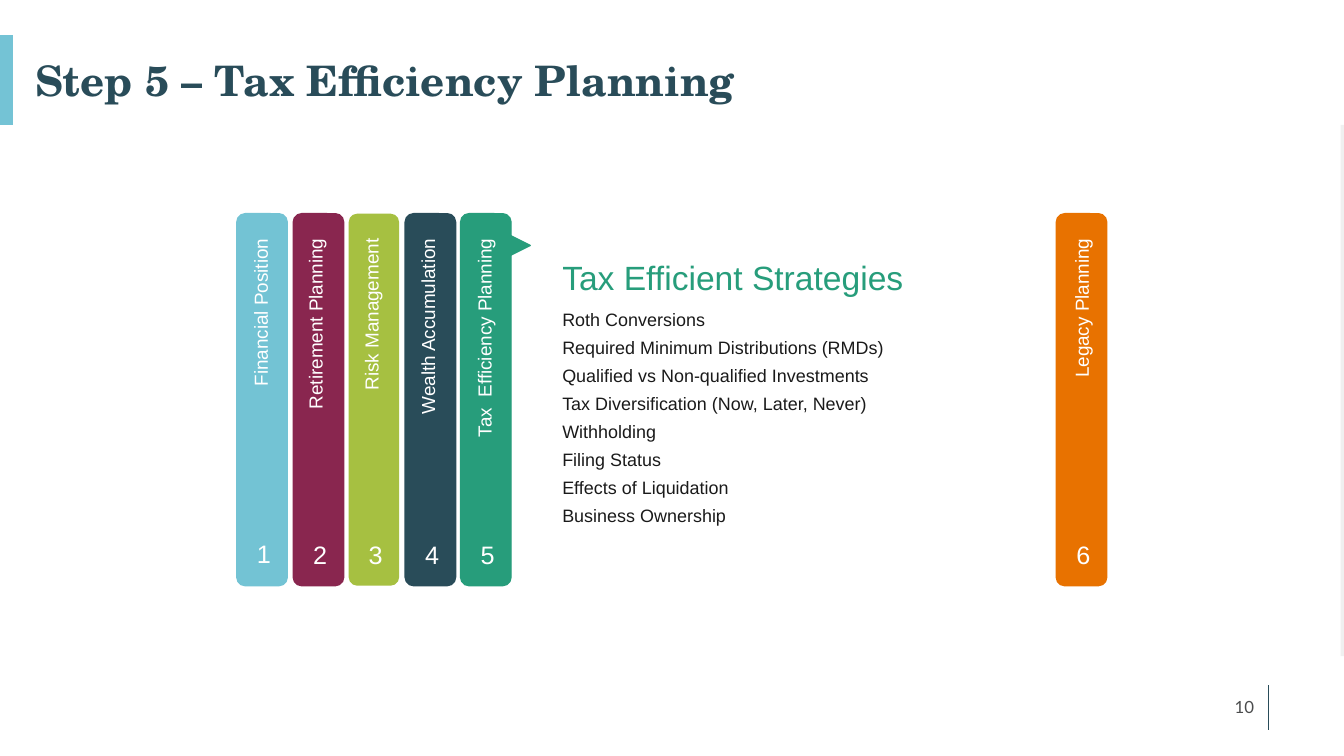
from lxml import etree
from pptx import Presentation
from pptx.dml.color import RGBColor
from pptx.enum.shapes import MSO_CONNECTOR, MSO_SHAPE
from pptx.enum.text import MSO_ANCHOR, PP_ALIGN
from pptx.oxml.ns import qn
from pptx.util import Pt

RECT, ROUND = MSO_SHAPE.RECTANGLE, MSO_SHAPE.ROUNDED_RECTANGLE
ARROW = MSO_SHAPE.RIGHT_ARROW
STRAIGHT = MSO_CONNECTOR.STRAIGHT
LEFT, CENTER, RIGHT = PP_ALIGN.LEFT, PP_ALIGN.CENTER, PP_ALIGN.RIGHT
TOP, MIDDLE, BOTTOM = MSO_ANCHOR.TOP, MSO_ANCHOR.MIDDLE, MSO_ANCHOR.BOTTOM

COLORS = {
    "white": "FFFFFF", "edge": "F0F0F0", "accent": "74C3D5",
    "sky": "73C3D4", "plum": "89264F", "lime": "A6C041",
    "navy": "294C59", "green": "279D7B", "orange": "E87200",
    "ink": "1A1A1A", "grey": "4B4C4D",
}

BAR_TOP, BAR_WIDTH, BAR_HEIGHT = 152.64, 36, 265.68
LABEL_TOP, LABEL_HEIGHT = 163.4, 23.76

# Label, colour, bar left, label length, label centre, number top
STEPS = [
    ("Financial Position", "sky", 169.2, 147.6, 186.12, 380.88),
    ("Retirement Planning", "plum", 209.52, 152.64, 225.36, 381.6),
    ("Risk Management", "lime", 249.12, 138.96, 265.32, 381.6),
    ("Wealth Accumulation", "navy", 289.44, 164.88, 305.64, 381.6),
    ("Tax  Efficiency Planning", "green", 329.04, 164.88, 345.96, 381.6),
    ("Legacy Planning", "orange", 754.56, 128.16, 772.56, 381.6),
]

STRATEGIES = [
    "Roth Conversions",
    "Required Minimum Distributions (RMDs)",
    "Qualified vs Non-qualified Investments",
    "Tax Diversification (Now, Later, Never)",
    "Withholding",
    "Filing Status",
    "Effects of Liquidation",
    "Business Ownership",
]


def write(frame, text, size=18, color="white", font="Arial", bold=False,
          align=LEFT, anchor=TOP, wrap=True, spacing=None, before=0):
    frame.word_wrap = wrap
    frame.vertical_anchor = anchor
    for index, line in enumerate(text.split("\n")):
        paragraph = frame.paragraphs[0] if index == 0 else frame.add_paragraph()
        paragraph.alignment = align
        if spacing:
            paragraph.line_spacing = spacing
        if index and before:
            paragraph.space_before = Pt(before)
        run = paragraph.add_run()
        run.text = line
        run.font.size = Pt(size)
        run.font.name = font
        run.font.bold = bold
        run.font.color.rgb = RGBColor.from_string(COLORS[color])


class SlideBuilder:
    def __init__(self, slide):
        self.shapes = slide.shapes

    def shape(self, kind, left, top, width, height, color, line=None):
        shape = self.shapes.add_shape(kind, Pt(left), Pt(top), Pt(width), Pt(height))
        shape.shadow.inherit = False
        shape.fill.solid()
        shape.fill.fore_color.rgb = RGBColor.from_string(COLORS[color])
        if line:
            shape.line.color.rgb = RGBColor.from_string(COLORS[color])
            shape.line.width = Pt(line)
        else:
            shape.line.fill.background()
        return shape

    def text(self, text, left, top, width, height, rotation=0, **style):
        box = self.shapes.add_textbox(Pt(left), Pt(top), Pt(width), Pt(height))
        box.rotation = rotation
        write(box.text_frame, text, **style)

    def vertical_line(self, x, top, bottom, color, width):
        line = self.shapes.add_connector(STRAIGHT, Pt(x), Pt(top), Pt(x), Pt(bottom))
        line.line.color.rgb = RGBColor.from_string(COLORS[color])
        line.line.width = Pt(width)
        etree.SubElement(line._element.spPr, qn("a:effectLst"))

    def step(self, number, label, color, left, length, center, number_top):
        outlined = color != "lime"
        self.shape(ROUND, left, BAR_TOP, BAR_WIDTH, BAR_HEIGHT, color,
                   line=1 if outlined else None)
        badge = self.shape(RECT, left + 7, number_top, 24.48, 28.8, color,
                           line=0.75 if outlined else None)
        write(badge.text_frame, str(number), align=CENTER, wrap=False)
        # Turned a quarter, so the label's length runs down the bar
        self.text(label, center - length / 2,
                  LABEL_TOP + (length - LABEL_HEIGHT) / 2, length, LABEL_HEIGHT,
                  rotation=270, size=13.5, align=RIGHT)


def main():
    presentation = Presentation()
    presentation.slide_width, presentation.slide_height = Pt(960), Pt(540)
    page = SlideBuilder(presentation.slides.add_slide(presentation.slide_layouts[6]))

    # Page frame
    page.shape(RECT, 957.6, 89.28, 2.4, 379.44, "edge")
    page.vertical_line(4.32, 25.2, 89.28, "accent", 10)
    page.vertical_line(905.76, 489.6, 521.28, "navy", 0.75)

    # Title
    page.text("Step 5 – Tax Efficiency Planning", 18, 37.44, 648, 41.76,
              size=30, color="navy", font="TeX Gyre Schola", bold=True,
              anchor=BOTTOM, spacing=0.9)

    # Strategies of the current step
    page.text("\n".join(STRATEGIES), 394.56, 215.28, 328.32, 171.36,
              size=12.8, color="ink", spacing=1.1, before=3.1)
    page.text("Tax Efficient Strategies", 394.56, 180, 270.72, 36.72,
              size=24, color="green")

    # Pointer from the current step, behind its bar
    pointer = page.shape(ARROW, 347.04, 167.04, 31.68, 16.56, "green", line=1)
    pointer.adjustments[1] = 1

    # Step bars
    for number, step in enumerate(STEPS, start=1):
        page.step(number, *step)

    # Slide number
    page.text("10", 686.88, 490.32, 216, 28.8, size=12, color="grey",
              font="Lato", align=RIGHT, anchor=MIDDLE)

    presentation.save("out.pptx")


if __name__ == "__main__":
    main()
